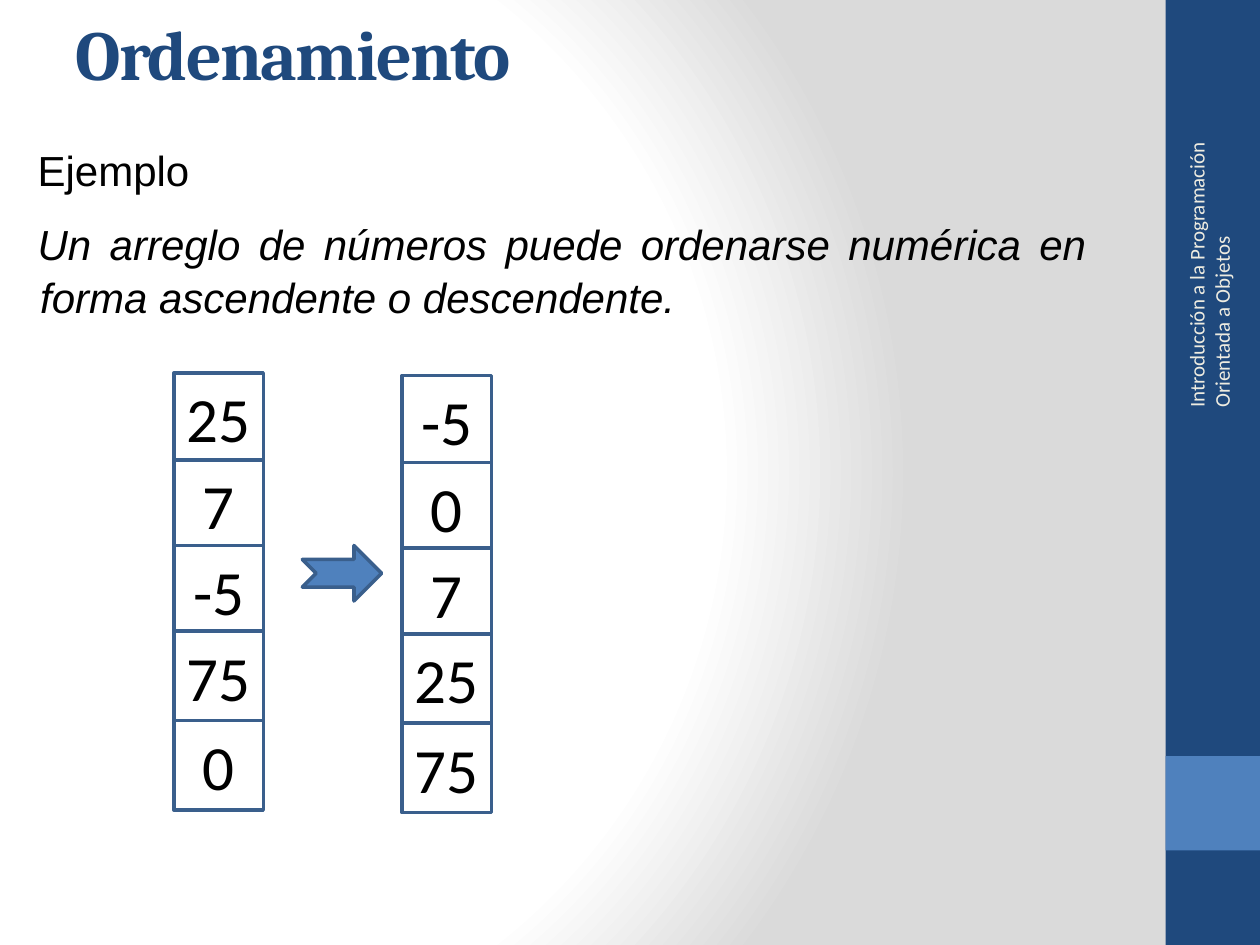
from pptx import Presentation
from pptx.dml.color import RGBColor
from pptx.enum.shapes import MSO_SHAPE
from pptx.enum.text import MSO_ANCHOR, MSO_AUTO_SIZE, PP_ALIGN
from pptx.oxml import parse_xml
from pptx.oxml.ns import nsdecls
from pptx.util import Inches, Pt

# Content
TITLE = "Ordenamiento"
COURSE = "Introducción a la Programación Orientada a Objetos"
BODY = [
    ("Ejemplo", False),
    ("Un arreglo de números puede ordenarse numérica en forma ascendente o descendente.", True),
]
ARRAYS = [  # left, top, values
    (1.38, 2.96, ["25", "7", "-5", "75", "0"]),
    (3.19, 2.98, ["-5", "0", "7", "25", "75"]),
]
ROW_OFFSETS = [0, 0.69, 1.37, 2.05, 2.76]
CELL = 0.71

NAVY = RGBColor(0x1F, 0x49, 0x7D)
BLUE = RGBColor(0x4F, 0x81, 0xBD)
OUTLINE = RGBColor(0x3A, 0x5F, 0x8C)
CREAM = RGBColor(0xEE, 0xEC, 0xE1)
BLACK = RGBColor(0, 0, 0)
WHITE = RGBColor(0xFF, 0xFF, 0xFF)

WIDTH, HEIGHT, BAND = 10, 7.5, 0.75
STOPS = [(0, WHITE), (75, WHITE), (100, RGBColor(0xDA, 0xDA, 0xDA))]


def add_span(para, text, font, size, color, bold=False, italic=False):
    span = para.add_run()
    span.text = text
    span.font.name, span.font.size = font, Pt(size)
    span.font.bold, span.font.italic = bold, italic
    span.font.color.rgb = color
    return span


def add_block(kind, left, top, width, height, fill, line=None):
    block = page.shapes.add_shape(kind, Inches(left), Inches(top), Inches(width), Inches(height))
    block.shadow.inherit = False
    block.fill.solid()
    block.fill.fore_color.rgb = fill
    if line is None:
        block.line.fill.background()
    else:
        block.line.color.rgb = line
        block.line.width = Pt(2)
    return block


def add_text_box(left, top, width, height):
    box = page.shapes.add_textbox(Inches(left), Inches(top), Inches(width), Inches(height))
    box.text_frame.word_wrap = True
    return box


deck = Presentation()
deck.slide_width, deck.slide_height = Inches(WIDTH), Inches(HEIGHT)
page = deck.slides.add_slide(deck.slide_layouts[5])

# Radial background
stops = "".join(
    f'<a:gs pos="{share * 1000}"><a:srgbClr val="{color}"/></a:gs>' for share, color in STOPS
)
page.element.cSld.insert(0, parse_xml(
    f'<p:bg {nsdecls("p", "a")}><p:bgPr><a:gradFill rotWithShape="1"><a:gsLst>{stops}</a:gsLst>'
    '<a:path path="circle"><a:fillToRect l="20000" t="50000" r="100000" b="50000"/></a:path>'
    '</a:gradFill><a:effectLst/></p:bgPr></p:bg>'
))

# Side band with course name
add_block(MSO_SHAPE.RECTANGLE, WIDTH - BAND, 0, BAND, HEIGHT, NAVY)
add_block(MSO_SHAPE.RECTANGLE, WIDTH - BAND, HEIGHT - 2 * BAND, BAND, BAND, BLUE)
course = add_text_box(8.26, 1.8, 2.67, 0.4)
course.rotation = 270
course.text_frame.vertical_anchor = MSO_ANCHOR.MIDDLE
add_span(course.text_frame.paragraphs[0], COURSE, "Calibri", 12, CREAM)

# Title
title = page.shapes.title
title.left, title.top = Inches(0.5), Inches(0.09)
title.width, title.height = Inches(8.98), Inches(0.66)
title.text_frame.auto_size = MSO_AUTO_SIZE.NONE
title.text_frame.vertical_anchor = MSO_ANCHOR.MIDDLE
heading = title.text_frame.paragraphs[0]
heading.alignment = PP_ALIGN.LEFT
span = add_span(heading, TITLE, "Cambria", 40, NAVY, bold=True)
span.font._element.set("spc", "-100")

# Explanation
frame = add_text_box(0.2, 1.08, 8.52, 1.51).text_frame
for index, (text, italic) in enumerate(BODY):
    para = frame.add_paragraph() if index else frame.paragraphs[0]
    para.alignment = PP_ALIGN.JUSTIFY
    para.line_spacing = 1.05
    if index:
        para.space_before = Pt(12)
    properties = para._p.get_or_add_pPr()
    properties.set("marL", str(Inches(0.02)))
    properties.set("indent", str(Inches(-0.02)))
    add_span(para, text, "Arial", 24, BLACK, italic=italic)

# Array before and after sorting
for left, top, values in ARRAYS:
    for offset, value in zip(ROW_OFFSETS, values):
        cell = add_block(MSO_SHAPE.RECTANGLE, left, top + offset, CELL, CELL, WHITE, OUTLINE)
        frame = cell.text_frame
        frame.margin_left = frame.margin_right = 0
        frame.vertical_anchor = MSO_ANCHOR.MIDDLE
        frame.paragraphs[0].alignment = PP_ALIGN.CENTER
        add_span(frame.paragraphs[0], value, "Calibri", 36, BLACK)

add_block(MSO_SHAPE.NOTCHED_RIGHT_ARROW, 2.4, 4.33, 0.63, 0.44, BLUE, OUTLINE)

deck.save("out.pptx")
